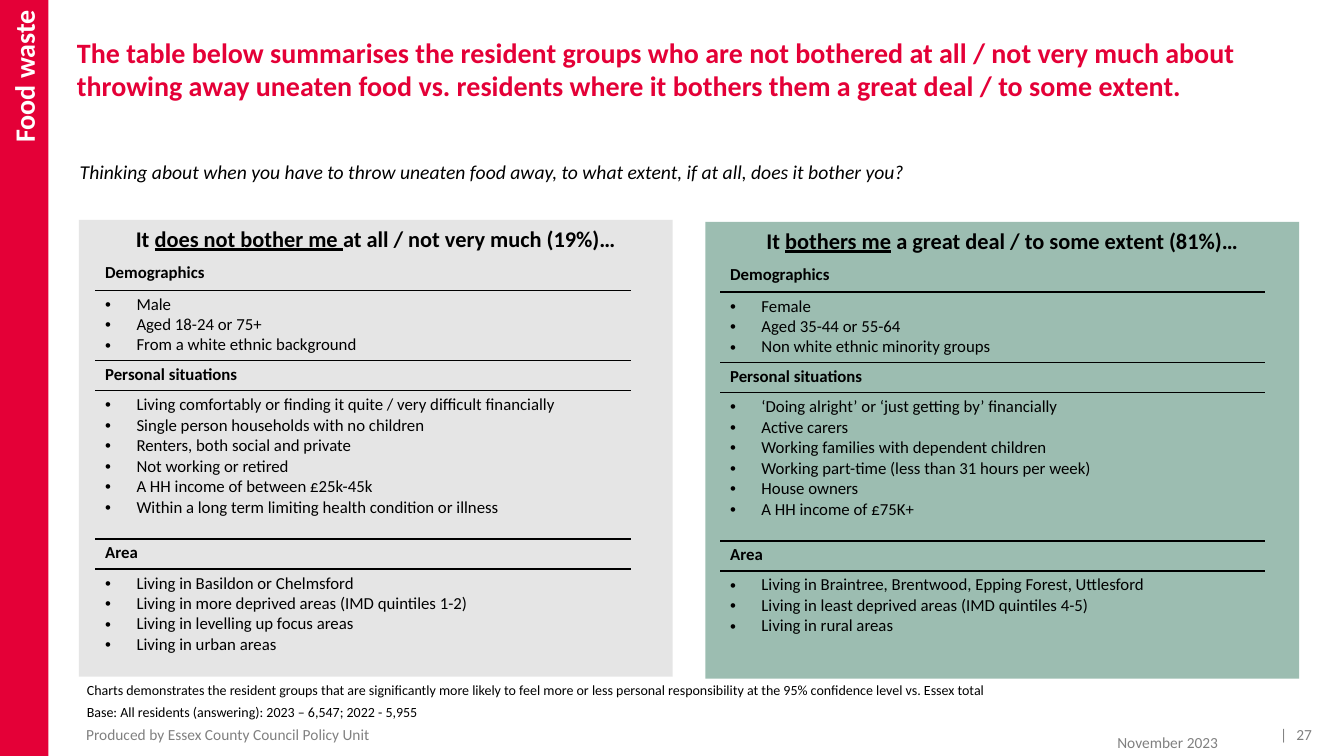
import pptx
import pptx.dml.color
import pptx.enum.shapes
import pptx.enum.text
import pptx.oxml.ns
import pptx.util
from lxml import etree
from pptx.util import Cm

RED = pptx.dml.color.RGBColor(0xE4, 0x00, 0x37)
GREY = pptx.dml.color.RGBColor(0x80, 0x80, 0x80)
PALE_GREY = pptx.dml.color.RGBColor(0xE5, 0xE5, 0xE5)
GREEN = pptx.dml.color.RGBColor(0x3A, 0x7D, 0x64)
BLACK = pptx.dml.color.RGBColor(0, 0, 0)
WHITE = pptx.dml.color.RGBColor(0xFF, 0xFF, 0xFF)
LEFT = pptx.enum.text.PP_ALIGN.LEFT
CENTER = pptx.enum.text.PP_ALIGN.CENTER
RIGHT = pptx.enum.text.PP_ALIGN.RIGHT
TOP = pptx.enum.text.MSO_ANCHOR.TOP
MIDDLE = pptx.enum.text.MSO_ANCHOR.MIDDLE
NO_GRID_STYLE = "{2D5ABB26-0587-4C30-8999-92F81FD0307C}"
ROW_HEIGHTS = (0.79, 1.78, 0.76, 3.73, 0.76, 2.26)

NOT_BOTHERED = {
    "Demographics": ["Male", "Aged 18-24 or 75+", "From a white ethnic background"],
    "Personal situations": [
        "Living comfortably or finding it quite / very difficult financially",
        "Single person households with no children",
        "Renters, both social and private",
        "Not working or retired",
        "A HH income of between £25k-45k",
        "Within a long term limiting health condition or illness",
    ],
    "Area": [
        "Living in Basildon or Chelmsford",
        "Living in more deprived areas (IMD quintiles 1-2)",
        "Living in levelling up focus areas",
        "Living in urban areas",
    ],
}
BOTHERED = {
    "Demographics": ["Female", "Aged 35-44 or 55-64", "Non white ethnic minority groups"],
    "Personal situations": [
        "‘Doing alright’ or ‘just getting by’ financially",
        "Active carers",
        "Working families with dependent children",
        "Working part-time (less than 31 hours per week)",
        "House owners",
        "A HH income of £75K+",
    ],
    "Area": [
        "Living in Braintree, Brentwood, Epping Forest, Uttlesford",
        "Living in least deprived areas (IMD quintiles 4-5)",
        "Living in rural areas",
    ],
}


def add_xml(parent, tag, **attributes):
    """Append a DrawingML child element and return it."""
    return etree.SubElement(parent, pptx.oxml.ns.qn(tag), attributes)


def format_runs(para, size, color=BLACK, bold=False, italic=False):
    """Apply one font to every run of a paragraph."""
    for span in para.runs:
        span.font.name = "Calibri"
        span.font.size = pptx.util.Pt(size)
        span.font.color.rgb = color
        span.font.bold = bold
        span.font.italic = italic


def set_margins(frame, left, top, right, bottom):
    """Set the four insets of a text frame or cell in centimetres."""
    frame.margin_left, frame.margin_top = Cm(left), Cm(top)
    frame.margin_right, frame.margin_bottom = Cm(right), Cm(bottom)


def add_text(page, box, text, size, color=BLACK, align=LEFT, anchor=TOP,
             margins=(0.25, 0.13, 0.25, 0.13), **style):
    """Add a one-paragraph text box and return its paragraph."""
    frame = page.shapes.add_textbox(*map(Cm, box)).text_frame
    frame.word_wrap = True
    frame.vertical_anchor = anchor
    set_margins(frame, *margins)
    frame.text = text
    para = frame.paragraphs[0]
    para.alignment = align
    format_runs(para, size, color, **style)
    return para


def add_panel(page, box, color):
    """Add a plain filled rectangle."""
    panel = page.shapes.add_shape(pptx.enum.shapes.MSO_SHAPE.RECTANGLE, *map(Cm, box))
    panel.shadow.inherit = False
    panel.fill.solid()
    panel.fill.fore_color.rgb = color
    panel.line.fill.background()
    panel.text_frame.word_wrap = True
    return panel


def add_section_tab(page, box, text):
    """Add the red side band with its upright section name."""
    frame = add_panel(page, box, RED).text_frame
    frame.text = text
    frame.vertical_anchor = MIDDLE
    set_margins(frame, 0.25, 0.25, 0.25, 0.13)
    frame._txBody.bodyPr.set("vert", "vert270")
    frame.paragraphs[0].alignment = RIGHT
    format_runs(frame.paragraphs[0], 20, WHITE, bold=True)


def add_rule(cell, side):
    """Draw a thin black border on one side of a cell."""
    properties = cell._tc.get_or_add_tcPr()
    line = etree.Element(pptx.oxml.ns.qn(side), {"w": "12700"})
    add_xml(add_xml(line, "a:solidFill"), "a:srgbClr", val=str(BLACK))
    properties.insert(0, line)


def fill_cell(cell, lines, is_heading):
    """Write a heading or a bulleted list into a cell."""
    set_margins(cell, 0.25, 0.1, 0.25, 0.1)
    cell.fill.background()
    add_rule(cell, "a:lnB" if is_heading else "a:lnT")
    cell.text_frame.text = "\n".join(lines)
    for para in cell.text_frame.paragraphs:
        if not is_heading:
            properties = para._p.get_or_add_pPr()
            properties.set("marL", str(Cm(0.79)))
            properties.set("indent", str(Cm(-0.79)))
            add_xml(properties, "a:buFont", typeface="Arial")
            add_xml(properties, "a:buChar", char="•")
        format_runs(para, 12, bold=is_heading)


def add_group_table(page, left, top, width, groups):
    """Add the table of headings and lists for one resident group."""
    table = page.shapes.add_table(
        len(ROW_HEIGHTS), 1, Cm(left), Cm(top), Cm(width), Cm(sum(ROW_HEIGHTS))).table
    table.first_row = table.horz_banding = False
    table._tbl.tblPr.find(pptx.oxml.ns.qn("a:tableStyleId")).text = NO_GRID_STYLE
    for row, height in zip(table.rows, ROW_HEIGHTS):
        row.height = Cm(height)
    for index, (heading, items) in enumerate(groups.items()):
        fill_cell(table.cell(2 * index, 0), [heading], True)
        fill_cell(table.cell(2 * index + 1, 0), items, False)


def add_group(page, box, color, heading, groups, table_inset, table_width, opacity=100):
    """Add a coloured panel with its heading and table."""
    left, top = box[:2]
    panel = add_panel(page, box, color)
    if opacity < 100:
        fill = panel._element.spPr.find(pptx.oxml.ns.qn("a:solidFill"))
        add_xml(fill[0], "a:alpha", val=str(opacity * 1000))
    panel.text_frame.vertical_anchor = TOP
    para = panel.text_frame.paragraphs[0]
    para.alignment = CENTER
    for text in heading:
        para.add_run().text = text
    format_runs(para, 16, bold=True)
    para.runs[1].font.underline = True
    add_group_table(page, left + table_inset, top + 0.98, table_width, groups)


def add_header(page, left, top):
    """Add the title and the survey question."""
    add_text(page, (left, top, 31.34, 2.74),
             "The table below summarises the resident groups who are not bothered at all / "
             "not very much about throwing away uneaten food vs. residents where it bothers "
             "them a great deal / to some extent.",
             20, RED, margins=(0, 0, 0, 0), bold=True)
    question = add_text(page, (left - 0.18, top + 2.97, 22.33, 0.86),
                        "Thinking about when you have to throw uneaten food away, "
                        "to what extent, if at all, does it bother you?", 14, italic=True)
    question.line_spacing = 1.06


def add_footer(page, left, top):
    """Add the notes, producer, date and page number."""
    add_text(page, (left, top, 25.98, 0.69),
             "Charts demonstrates the resident groups that are significantly more likely to feel "
             "more or less personal responsibility at the 95% confidence level vs. Essex total", 10)
    add_text(page, (left, top + 0.56, 15.57, 0.69),
             "Base: All residents (answering): 2023 – 6,547; 2022 - 5,955", 10)
    add_text(page, (left, top + 1.27, 16.61, 0.38), "Produced by Essex County Council Policy Unit",
             11, GREY, anchor=MIDDLE, margins=(0.23, 0.13, 0.25, 0.13))
    add_text(page, (left + 22.66, top + 1.47, 6.1, 0.38), "November 2023",
             11, GREY, RIGHT, MIDDLE, (0.25, 0.13, 0, 0.13))
    number = add_text(page, (left + 30.32, top + 1.27, 1, 0.38), "|\t27",
                      11, GREY, anchor=MIDDLE, margins=(0, 0.13, 0, 0.13))
    stops = add_xml(number._p.get_or_add_pPr(), "a:tabLst")
    add_xml(stops, "a:tab", pos=str(Cm(0.41)), algn="l")


def main():
    """Build and save the food waste slide."""
    deck = pptx.Presentation()
    deck.slide_width, deck.slide_height = Cm(33.87), Cm(19.05)
    page = deck.slides.add_slide(deck.slide_layouts[6])
    add_section_tab(page, (-0.02, 0, 1.24, 19.05), "Food waste")
    add_header(page, 1.94, 0.89)
    add_group(page, (1.99, 5.54, 14.96, 11.51), PALE_GREY,
              ("It ", "does not bother me ", "at all / not very much (19%)…"),
              NOT_BOTHERED, 0.41, 13.49)
    add_group(page, (17.78, 5.59, 14.96, 11.51), GREEN,
              ("It ", "bothers me", " a great deal / to some extent (81%)…"),
              BOTHERED, 0.37, 13.74, opacity=50)
    add_footer(page, 1.94, 17.04)
    deck.save("out.pptx")


if __name__ == "__main__":
    main()
